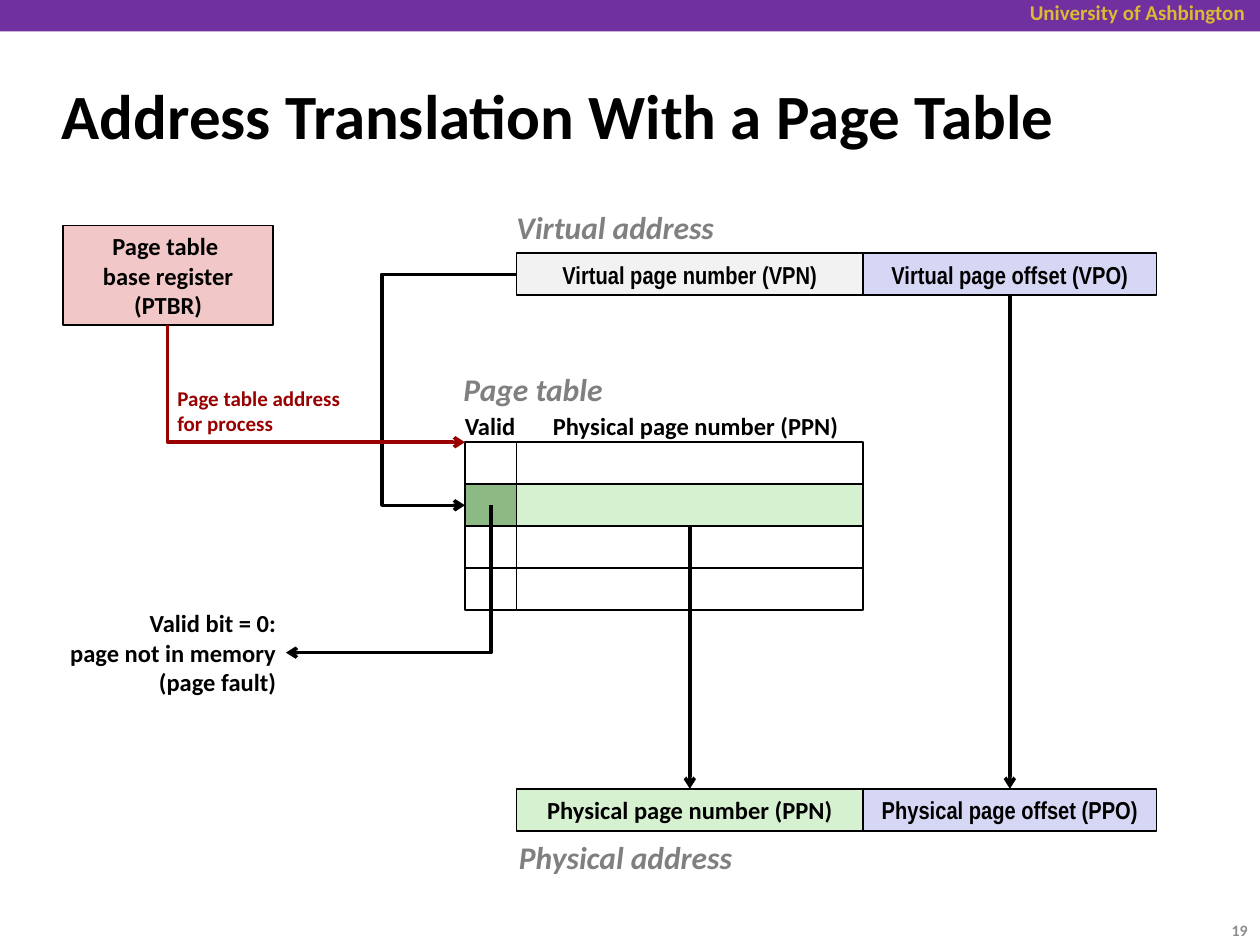
from dataclasses import dataclass
from typing import Optional

from lxml import etree
from pptx import Presentation
from pptx.dml.color import RGBColor
from pptx.enum.shapes import MSO_CONNECTOR as CONN, MSO_SHAPE as SHAPE
from pptx.enum.text import MSO_ANCHOR as ANCHOR, PP_ALIGN as ALIGN
from pptx.oxml.ns import qn
from pptx.util import Inches, Pt

COLORS = {
    "black": "000000", "purple": "7030A0", "gold": "DCB834", "gray": "808080",
    "number": "8C8C8C", "red": "990000", "pink": "F1C7C7", "light": "F2F2F2",
    "lavender": "D6D6F5", "green": "D5F1CF", "dark_green": "8DBA84",
}
BODY, NARROW = "Calibri", "Arial Narrow"
X_VALID, X_PAGE, X_OFFSET, X_END = 3.69, 4.1, 6.85, 9.18
ROW_H = 1 / 3
Y_VIRTUAL, Y_TABLE, Y_PHYSICAL = 2.01, 3.51, 6.26
Y_ENTRY = Y_TABLE + 1.5 * ROW_H
X_VPO_MID = (X_OFFSET + X_END) / 2
X_PPN_MID = (X_PAGE + X_OFFSET) / 2


@dataclass
class Style:
    size: float = 14
    color: str = "black"
    font: str = BODY
    italic: bool = False
    align: ALIGN = ALIGN.LEFT
    anchor: ANCHOR = ANCHOR.TOP


@dataclass
class Box:
    x: float
    y: float
    w: float
    h: float = ROW_H
    fill: Optional[str] = None
    line: Optional[str] = "black"
    lines: tuple[str, ...] = ()
    font: str = BODY


@dataclass
class Label:
    x: float
    y: float
    w: float
    h: float
    lines: tuple[str, ...]
    style: Style
    wrap: bool = False


def rgb(name: str) -> RGBColor:
    return RGBColor.from_string(COLORS[name])


def write(tf, lines: tuple[str, ...], style: Style) -> None:
    tf.vertical_anchor = style.anchor
    for i, line in enumerate(lines):
        p = tf.paragraphs[0] if i == 0 else tf.add_paragraph()
        p.alignment = style.align
        for j, part in enumerate(line.split("\n")):
            if j:
                p.add_line_break()
            r = p.add_run()
            r.text = part
            r.font.name, r.font.size = style.font, Pt(style.size)
            r.font.bold, r.font.italic = True, style.italic
            r.font.color.rgb = rgb(style.color)


def draw_box(slide, box: Box) -> None:
    sp = slide.shapes.add_shape(
        SHAPE.RECTANGLE, Inches(box.x), Inches(box.y), Inches(box.w), Inches(box.h))
    sp.shadow.inherit = False
    if box.fill:
        sp.fill.solid()
        sp.fill.fore_color.rgb = rgb(box.fill)
    else:
        sp.fill.background()
    if box.line:
        sp.line.color.rgb = rgb(box.line)
        sp.line.width = Pt(1)
    else:
        sp.line.fill.background()
    if box.lines:
        write(sp.text_frame, box.lines,
              Style(font=box.font, align=ALIGN.CENTER, anchor=ANCHOR.MIDDLE))


def draw_label(slide, label: Label) -> None:
    sp = slide.shapes.add_textbox(
        Inches(label.x), Inches(label.y), Inches(label.w), Inches(label.h))
    sp.text_frame.word_wrap = label.wrap
    write(sp.text_frame, label.lines, label.style)


def draw_arrow(slide, x1: float, y1: float, x2: float, y2: float,
               kind: CONN = CONN.STRAIGHT, color: str = "black"):
    cxn = slide.shapes.add_connector(
        kind, Inches(x1), Inches(y1), Inches(x2), Inches(y2))
    cxn.line.color.rgb = rgb(color)
    cxn.line.width = Pt(2)
    etree.SubElement(cxn.line._get_or_add_ln(), qn("a:tailEnd"), type="arrow")
    etree.SubElement(cxn._element.spPr, qn("a:effectLst"))
    return cxn


def draw_loop(slide, x1: float, y1: float, x2: float, y2: float, bend: float) -> None:
    cxn = draw_arrow(slide, x1, y1, x2, y2, CONN.ELBOW)
    guides = cxn._element.spPr.find(qn("a:prstGeom")).get_or_add_avLst()
    value = round((bend - x1) / (x2 - x1) * 100000)
    etree.SubElement(guides, qn("a:gd"), name="adj1", fmla=f"val {value}")


def draw_corner(slide, x1: float, y1: float, x2: float, y2: float,
                color: str = "black") -> None:
    cx, cy = (x1 + x2) / 2, (y1 + y2) / 2
    half_w, half_h = (y2 - y1) / 2, abs(x2 - x1) / 2
    rightward = x2 > x1
    if rightward:
        half_w = -half_w
    cxn = draw_arrow(slide, cx - half_w, cy - half_h, cx + half_w, cy + half_h,
                     CONN.ELBOW, color)
    spPr = cxn._element.spPr
    spPr.find(qn("a:prstGeom")).set("prst", "bentConnector2")
    spPr.find(qn("a:xfrm")).set("rot", str((270 if rightward else 90) * 60000))


def main() -> None:
    prs = Presentation()
    prs.slide_width, prs.slide_height = Inches(10), Inches(7.5)
    slide = prs.slides.add_slide(prs.slide_layouts[5])

    title = slide.shapes.title
    title.left, title.top = Inches(0.39), Inches(0.49)
    title.width, title.height = Inches(9.19), Inches(0.83)
    write(title.text_frame, ("Address Translation With a Page Table",),
          Style(size=36, anchor=ANCHOR.MIDDLE))

    page_w, offset_w = X_OFFSET - X_PAGE, X_END - X_OFFSET
    boxes = [
        Box(0, 0, 10, 0.25, "purple", None),
        Box(X_PAGE, Y_VIRTUAL, page_w, fill="light",
            lines=("Virtual page number (VPN)",), font=NARROW),
        Box(X_OFFSET, Y_VIRTUAL, offset_w, fill="lavender",
            lines=("Virtual page offset (VPO)",), font=NARROW),
        Box(X_PAGE, Y_PHYSICAL, page_w, fill="green",
            lines=("Physical page number (PPN)",)),
        Box(X_OFFSET, Y_PHYSICAL, offset_w, fill="lavender",
            lines=("Physical page offset (PPO)",), font=NARROW),
        Box(0.5, 1.79, 1.67, 0.79, "pink",
            lines=("Page table \nbase register", "(PTBR)")),
    ]
    for row in range(4):
        y = Y_TABLE + row * ROW_H
        page_fill, valid_fill = ("green", "dark_green") if row == 1 else (None, None)
        boxes += [Box(X_PAGE, y, page_w, fill=page_fill),
                  Box(X_VALID, y, X_PAGE - X_VALID, fill=valid_fill)]
    for box in boxes:
        draw_box(slide, box)

    draw_loop(slide, X_PAGE, Y_VIRTUAL + ROW_H / 2, X_VALID, Y_ENTRY, 3.03)
    draw_arrow(slide, X_VPO_MID, Y_VIRTUAL + ROW_H, X_VPO_MID, Y_PHYSICAL)
    draw_arrow(slide, X_PPN_MID, Y_TABLE + 2 * ROW_H, X_PPN_MID, Y_PHYSICAL)
    draw_corner(slide, (X_VALID + X_PAGE) / 2, Y_ENTRY, 2.27, 5.18)
    draw_corner(slide, 1.33, 2.58, X_VALID, Y_TABLE, "red")

    heading, plain = Style(size=18, color="gray", italic=True), Style()
    labels = [
        Label(7.33, -0.05, 2.65, 0.3, ("University of Ashbington",),
              Style(size=12, color="gold", align=ALIGN.RIGHT), True),
        Label(4, 1.6, 1.78, 0.4, ("Virtual address",), heading),
        Label(4.02, 6.6, 1.91, 0.4, ("Physical address",), heading),
        Label(3.58, 2.89, 1.42, 0.4, ("Page table",), heading, True),
        Label(3.59, 3.21, 0.61, 0.34, ("Valid",), plain),
        Label(4.29, 3.21, 2.48, 0.34, ("Physical page number (PPN)",), plain),
        Label(1.31, 3.01, 1.54, 0.5, ("Page table address", "for process"),
              Style(size=12, color="red")),
        Label(0.45, 4.78, 1.84, 0.81,
              ("Valid bit = 0:", "page not in memory", "(page fault)"),
              Style(align=ALIGN.RIGHT)),
        Label(9.33, 7.18, 0.67, 0.4, ("19",),
              Style(size=9, color="number", align=ALIGN.RIGHT, anchor=ANCHOR.MIDDLE),
              True),
    ]
    for label in labels:
        draw_label(slide, label)

    prs.save("out.pptx")


if __name__ == "__main__":
    main()
